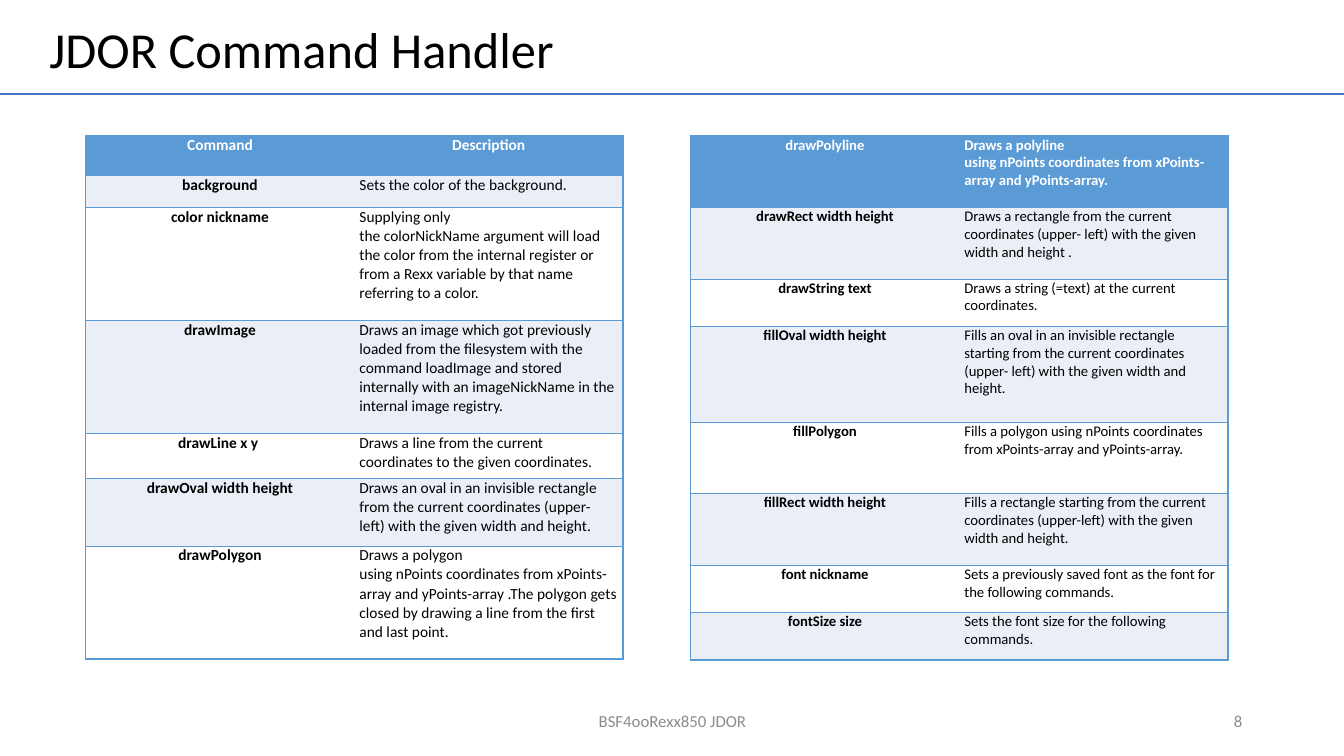
"""Build the JDOR Command Handler slide with its two command tables."""
from lxml import etree
from pptx import Presentation, util as u
from pptx.dml.color import RGBColor
from pptx.enum import shapes, text
from pptx.oxml import ns

TITLE = "JDOR Command Handler"
FOOT = [("BSF4ooRexx850 JDOR", 4.42, 4.5, "CENTER"), ("8", 9.42, 3, "RIGHT")]
HARD = "~"
LEFT = [
    (0.39, "Command", "Description"),
    (0.32, "background", "Sets the color of the background."),
    (1.12, "color nickname", "Supplying only the~colorNickName~argument will load the color from "
     "the internal register or from a Rexx variable by that name referring to a color."),
    (1.12, "drawImage", "Draws an image which got previously loaded from the filesystem with the "
     "command~loadImage~and stored internally with an~imageNickName~in the internal image registry."),
    (0.45, "drawLine x y ", "Draws a line from the current coordinates to the given coordinates."),
    (0.67, "drawOval width height", "Draws an oval in an invisible rectangle from the current "
     "coordinates (upper- left) with the given width and height."),
    (1.12, "drawPolygon", "Draws a polygon using~nPoints~coordinates from~xPoints-array and~yPoints-array "
     ".The polygon gets closed by drawing a line from the first and last point."),
]
RIGHT = [
    (0.71, "drawPolyline", "Draws a polyline using~nPoints~coordinates from~xPoints-array "
     "and~yPoints-array."),
    (0.71, "drawRect width height", "Draws a rectangle from the current coordinates (upper- left) "
     "with the given width and height ."),
    (0.47, "drawString text", "Draws a string (=text) at the current coordinates."),
    (0.95, "fillOval width height", "Fills an oval in an invisible rectangle starting from the current "
     "coordinates (upper- left) with the given width and height."),
    (0.71, "fillPolygon", "Fills a polygon using~nPoints~coordinates from~xPoints-array~and~yPoints-array.~"),
    (0.71, "fillRect width height", "Fills a rectangle starting from the current coordinates (upper-left) "
     "with the given width and height."),
    (0.47, "font nickname", "Sets a previously saved font as the font for the following commands."),
    (0.47, "fontSize size", "Sets the font size for the following commands."),
]
TABLES = [(LEFT, 0.85, 11, "CENTER"), (RIGHT, 6.85, 10.5, "LEFT")]
TOP, WIDE, HIGH = 1.35, 5.33, 5.21
BLUE, PALE, WHITE, BLACK, GREY, RULE = "5B9BD5", "EAEFF7", "FFFFFF", "000000", "8C8C8C", "4472C4"
PLAIN = "{2D5ABB26-0587-4C30-8999-92F81FD0307C}"


def color(code):
    return RGBColor.from_string(code)


def apply(item, form):
    for key, value in form.items():
        setattr(item, key, value)


def write(frame, words, size, code, align, bold=False):
    para = frame.paragraphs[0]
    para.alignment = getattr(text.PP_ALIGN, align)
    run = para.add_run()
    run.text = words.replace(HARD, chr(160))
    apply(run.font, {"name": "Calibri", "size": u.Pt(size), "bold": bold})
    run.font.color.rgb = color(code)
    return para


def border(cell, sides):
    props = cell._tc.get_or_add_tcPr()
    for side in sides:
        line = etree.SubElement(props, ns.qn("a:ln" + side), w=str(u.Pt(1)))
        fill = etree.SubElement(line, ns.qn("a:solidFill"))
        etree.SubElement(fill, ns.qn("a:srgbClr"), val=BLUE)


def fill_cell(cell, words, size, row, col, align):
    apply(cell, {"margin_left": u.Inches(0.05), "margin_right": u.Inches(0.05),
                 "margin_top": 0, "margin_bottom": 0})
    border(cell, ("RTB" if col else "LTB"))
    cell.fill.solid()
    cell.fill.fore_color.rgb = color(BLUE if row == 0 else PALE if row % 2 else WHITE)
    write(cell.text_frame, words, size, BLACK if row else WHITE, align, row == 0 or col == 0)


def add_grid(slide, rows, left, size, head):
    frame = slide.shapes.add_table(len(rows), 2, u.Inches(left), u.Inches(TOP),
                                   u.Inches(WIDE), u.Inches(HIGH))
    grid = frame.table
    grid._tbl.tblPr.find(ns.qn("a:tableStyleId")).text = PLAIN
    for row, (high, *words) in enumerate(rows):
        grid.rows[row].height = u.Inches(high)
        for col, part in enumerate(words):
            align = "CENTER" if col == 0 else head if row == 0 else "LEFT"
            fill_cell(grid.cell(row, col), part, size, row, col, align)


def main():
    deck = Presentation()
    apply(deck, {"slide_width": u.Inches(13.33), "slide_height": u.Inches(7.5)})
    slide = deck.slides.add_slide(deck.slide_layouts[5])

    title = slide.shapes.title
    apply(title, {"left": u.Inches(0.39), "top": u.Inches(-0.21),
                  "width": u.Inches(11.5), "height": u.Inches(1.45)})
    apply(title.text_frame, {"vertical_anchor": text.MSO_ANCHOR.MIDDLE,
                             "auto_size": text.MSO_AUTO_SIZE.NONE})
    write(title.text_frame, TITLE, 36, BLACK, "LEFT").line_spacing = 0.9

    rule = slide.shapes.add_connector(shapes.MSO_CONNECTOR.STRAIGHT, 0, u.Inches(0.93),
                                      deck.slide_width, u.Inches(0.93))
    rule.line.color.rgb = color(RULE)
    rule.line.width = u.Pt(1.5)
    etree.SubElement(rule._element.spPr, ns.qn("a:effectLst"))

    for rows, left, size, head in TABLES:
        add_grid(slide, rows, left, size, head)

    for words, left, wide, align in FOOT:
        box = slide.shapes.add_textbox(u.Inches(left), u.Inches(6.95), u.Inches(wide), u.Inches(0.4))
        apply(box.text_frame, {"word_wrap": True, "vertical_anchor": text.MSO_ANCHOR.MIDDLE})
        write(box.text_frame, words, 12, GREY, align)

    deck.save("out.pptx")


if __name__ == "__main__":
    main()
